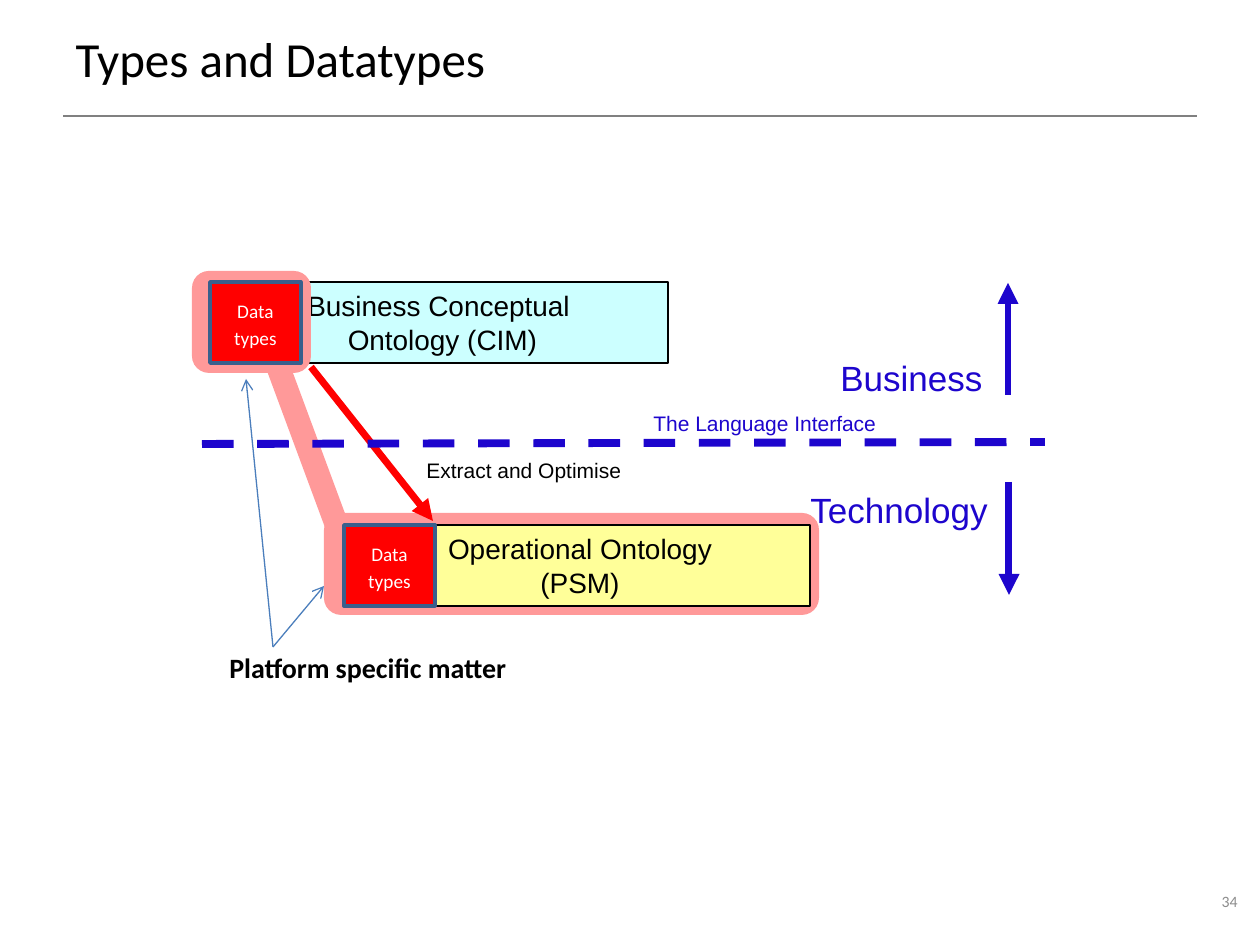
from pptx import Presentation
from pptx.dml.color import RGBColor
from pptx.enum.dml import MSO_LINE as Dash
from pptx.enum.shapes import MSO_CONNECTOR as Conn, MSO_SHAPE as Shape
from pptx.enum.text import MSO_ANCHOR as Anchor, PP_ALIGN as Align
from pptx.oxml.ns import qn
from pptx.util import Pt
from lxml.etree import SubElement

BLACK = RGBColor(0, 0, 0)
WHITE = RGBColor(255, 255, 255)
GREY = RGBColor(0x8C, 0x8C, 0x8C)
RULE = RGBColor(0x80, 0x80, 0x80)
CYAN = RGBColor(0xCC, 0xFF, 0xFF)
YELLOW = RGBColor(0xFF, 0xFF, 0x99)
PINK = RGBColor(0xFF, 0x99, 0x99)
RED = RGBColor(255, 0, 0)
BLUE = RGBColor(0x1D, 0x05, 0xCD)
STEEL = RGBColor(0x4B, 0x7E, 0xBC)
NAVY = RGBColor(0x3A, 0x5F, 0x8C)


def px(*nums):
    return [round(n * 914400 / 126) for n in nums]


class Deck:
    sans = "Arial"
    head = "Calibri"

    def __init__(self):
        self.prs = Presentation()
        self.prs.slide_width, self.prs.slide_height = px(1260, 945)
        self.slide = self.prs.slides.add_slide(self.prs.slide_layouts[5])
        self.shapes = self.slide.shapes

    def put(self, shape, text, size, color=BLACK, face=sans, bold=False,
            align=Align.LEFT, anchor=Anchor.TOP, wrap=True, loose=False):
        frame = shape.text_frame
        frame.text = text
        frame.word_wrap = wrap
        frame.vertical_anchor = anchor
        for par in frame.paragraphs:
            par.alignment = align
            par.font.size = Pt(size)
            par.font.name = face
            par.font.bold = bold
            par.font.color.rgb = color
            if loose:
                par.line_spacing = 1.15
                par.space_after = Pt(10)

    def title(self, box, text):
        shape = self.shapes.title
        shape.left, shape.top, shape.width, shape.height = px(*box)
        self.put(shape, text, 28, face=self.head, anchor=Anchor.MIDDLE)

    def label(self, box, text, size, color=BLACK, **style):
        self.put(self.shapes.add_textbox(*px(*box)), text, size, color, **style)

    def block(self, box, fill, kind=Shape.RECTANGLE, edge=None, width=0.75):
        shape = self.shapes.add_shape(kind, *px(*box))
        shape.shadow.inherit = False
        shape.fill.solid()
        shape.fill.fore_color.rgb = fill
        if edge is None:
            shape.line.fill.background()
        else:
            shape.line.color.rgb = edge
            shape.line.width = Pt(width)
        return shape

    def layer(self, box, fill, text):
        self.put(self.block(box, fill, edge=BLACK), text, 16,
                 align=Align.CENTER, anchor=Anchor.MIDDLE)

    def types(self, left, top):
        shape = self.block((left, top, 91, 81), RED, edge=NAVY, width=2)
        self.put(shape, "Data types", 11, WHITE, self.head, loose=True,
                 align=Align.CENTER, anchor=Anchor.MIDDLE)

    def slant(self, box, fill, skew):
        shape = self.block(box, fill, Shape.PARALLELOGRAM)
        shape.adjustments[0] = skew
        shape.element.spPr.find(qn("a:xfrm")).set("flipH", "1")

    def line(self, ends, color, width, tip=None, dash=None):
        link = self.shapes.add_connector(Conn.STRAIGHT, *px(*ends))
        link.line.color.rgb = color
        link.line.width = Pt(width)
        if dash:
            link.line.dash_style = dash
        props = link.element.spPr
        if tip:
            SubElement(props.find(qn("a:ln")), qn("a:tailEnd"), type=tip)
        SubElement(props, qn("a:effectLst"))


def main():
    deck = Deck()
    deck.line((63, 116, 1197, 116), RULE, 0.75)
    deck.title((63, -21, 1134, 157), "Types and Datatypes")

    deck.layer((217, 282, 451, 81), CYAN, "Business Conceptual \nOntology (CIM)")
    for box in (192, 271, 119, 102), (324, 513, 495, 102):
        deck.block(box, PINK, Shape.ROUNDED_RECTANGLE)
    deck.slant((246, 314, 126, 272), PINK, 0.8)
    deck.layer((350, 525, 460, 81), YELLOW, "Operational Ontology\n(PSM)")

    deck.line((311, 367, 433, 521), RED, 4, "triangle")
    deck.label((414, 451, 221, 37), "Extract and Optimise", 12, wrap=False)
    deck.label((641, 404, 388, 37), "The Language Interface", 12, BLUE)
    deck.label((828, 350, 252, 53), "Business", 20, BLUE)
    deck.label((798, 482, 284, 53), "Technology", 20, BLUE)
    deck.line((1009, 482, 1009, 595), BLUE, 4, "triangle")
    deck.line((202, 444, 1045, 442), BLUE, 4.5, dash=Dash.DASH)

    deck.types(344, 525)
    deck.types(210, 282)
    deck.line((1008, 395, 1008, 283), BLUE, 4, "triangle")

    note = deck.block((217, 639, 309, 64), WHITE)
    deck.put(note, "Platform specific matter", 16, face=deck.head,
             bold=True, loose=True)
    for end in (324, 586), (246, 379):
        deck.line((273, 647, *end), STEEL, 0.75, "arrow")
    deck.label((1197, 876, 53, 50), "34", 9, GREY, face=deck.head,
               align=Align.RIGHT, anchor=Anchor.MIDDLE)
    deck.prs.save("out.pptx")


if __name__ == "__main__":
    main()
